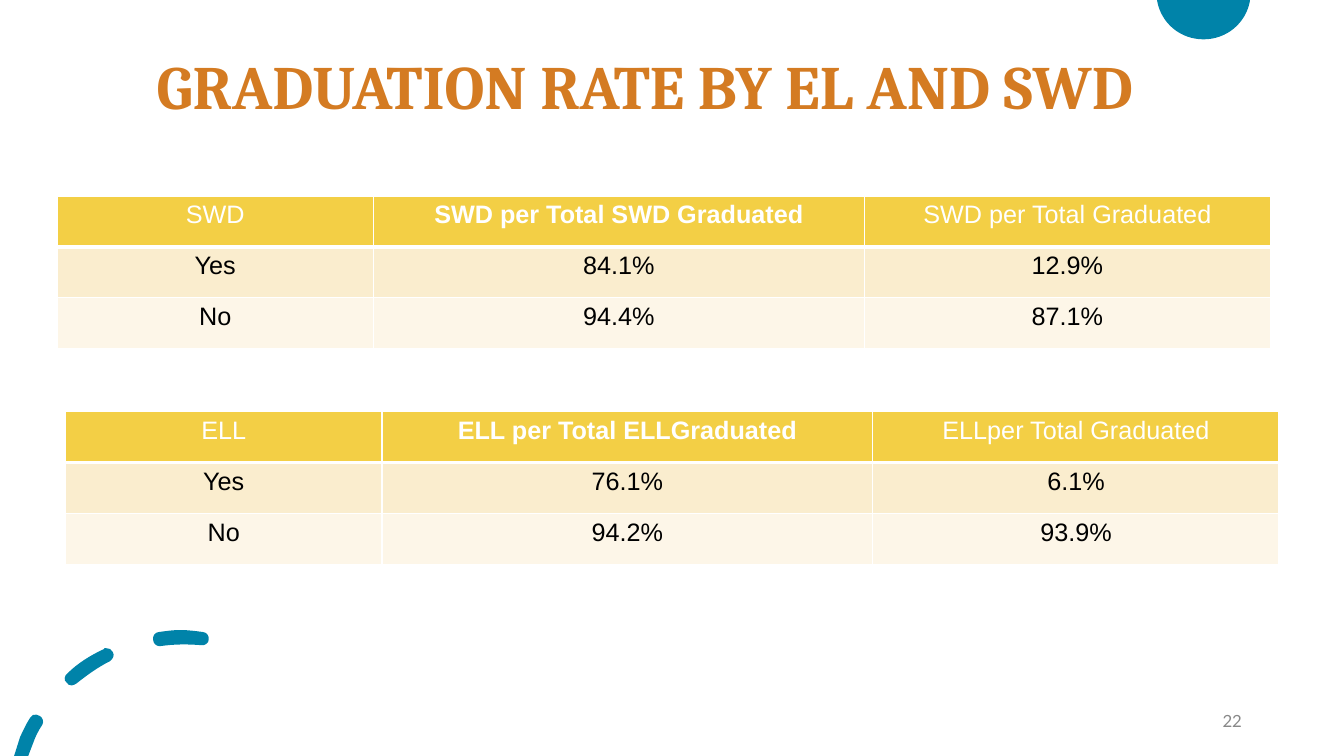
import pptx
import pptx.dml.color
import pptx.enum.text
import pptx.oxml
import pptx.oxml.ns
import pptx.util

# The grid: one column or row is a hundredth of an inch
COLUMNS, ROWS = 1333.33, 750
PITCH = pptx.util.Inches(0.01)
ALIGN = pptx.enum.text.PP_ALIGN


def color(value):
    return pptx.dml.color.RGBColor.from_string(value)


def grid(*counts):
    return [round(count * PITCH) for count in counts]


def write(frame, text, *, size, font, fill, bold=False, align=ALIGN.CENTER, spacing=None):
    paragraph = frame.paragraphs[0]
    paragraph.alignment = align
    paragraph.line_spacing = spacing
    run = paragraph.add_run()
    run.text = text
    run.font.size = pptx.util.Pt(size)
    run.font.name = font
    run.font.bold = bold
    run.font.color.rgb = color(fill)


class SlideBuilder:
    accent, title_color, muted = "0083A9", "D47B22", "888888"
    header_fill, row_fills = "F3CF45", ("FAEDCE", "FDF6E8")
    white, black = "FFFFFF", "000000"
    title_font, table_font, number_font = "Cambria", "Arial", "Lato"

    def __init__(self, presentation):
        self.slide = presentation.slides.add_slide(presentation.slide_layouts[6])
        self.slide.background.fill.solid()
        self.slide.background.fill.fore_color.rgb = color(self.white)

    def outline(self, contours):
        """Each step of a contour is a line (x, y) or a Bézier curve (six numbers)."""
        builder = None
        for start, steps in contours:
            if builder is None:
                builder = self.slide.shapes.build_freeform(*grid(*start), scale=1.0)
            else:
                builder.move_to(*grid(*start))
            builder.add_line_segments([grid(*step[-2:]) for step in steps], close=True)
        shape = builder.convert_to_shape()
        self.bend(shape, [step for _, steps in contours for step in steps])
        shape.shadow.inherit = False
        shape.fill.solid()
        shape.fill.fore_color.rgb = color(self.accent)
        shape.line.fill.background()

    def bend(self, shape, steps):
        lines = list(shape._element.iter(pptx.oxml.ns.qn("a:lnTo")))
        for line, step in zip(lines, steps):
            if len(step) == 6:
                numbers = grid(*step)
                points = "".join(f'<a:pt x="{x - shape.left}" y="{y - shape.top}"/>'
                                 for x, y in zip(numbers[::2], numbers[1::2]))
                curve = pptx.oxml.parse_xml(
                    f'<a:cubicBezTo {pptx.oxml.ns.nsdecls("a")}>{points}</a:cubicBezTo>')
                line.getparent().replace(line, curve)

    def text(self, text, box, **style):
        frame = self.slide.shapes.add_textbox(*grid(*box)).text_frame
        frame.word_wrap = True
        frame.vertical_anchor = pptx.enum.text.MSO_ANCHOR.MIDDLE
        write(frame, text, **style)

    def borders(self, cell, top, bottom):
        properties = cell._tc.get_or_add_tcPr()
        for side, width in (("L", 1), ("R", 1), ("T", top), ("B", bottom)):
            properties.append(pptx.oxml.parse_xml(
                f'<a:ln{side} {pptx.oxml.ns.nsdecls("a")} w="{pptx.util.Pt(width)}">'
                f'<a:solidFill><a:srgbClr val="{self.white}"/></a:solidFill></a:ln{side}>'))

    def table(self, left, top, widths, height, rows):
        box = grid(left, top, sum(widths), height * len(rows))
        table = self.slide.shapes.add_table(len(rows), len(widths), *box).table
        table.horz_banding = False
        for column, width in zip(table.columns, grid(*widths)):
            column.width = width
        for r, row in enumerate(rows):
            table.rows[r].height = grid(height)[0]
            header = r == 0
            for c, text in enumerate(row):
                cell = table.cell(r, c)
                self.borders(cell, top=3 if r == 1 else 1, bottom=3 if header else 1)
                cell.fill.solid()
                cell.fill.fore_color.rgb = color(
                    self.header_fill if header else self.row_fills[(r - 1) % 2])
                write(cell.text_frame, text, size=18, font=self.table_font,
                      fill=self.white if header else self.black, bold=header and c == 1)


def main():
    presentation = pptx.Presentation()
    presentation.slide_width, presentation.slide_height = grid(COLUMNS, ROWS)
    builder = SlideBuilder(presentation)

    # Half disc at the top edge
    builder.outline([((1148, 0), [(1240, 0), (1240, 1), (1236, 23, 1217, 39, 1194, 39),
                                  (1171, 39, 1152, 23, 1148, 1)])])

    # Dashed arc in the bottom corner
    builder.outline([
        ((36, 709), [(34, 708, 31, 710, 30, 712), (26, 718, 23, 725, 20, 731), (14, ROWS),
                     (28, ROWS), (33, 737), (35, 731, 38, 725, 42, 719),
                     (44, 716, 42, 711, 39, 710), (38, 709, 37, 709, 36, 709)]),
        ((105, 643), [(104, 643, 103, 643, 103, 644), (90, 650, 77, 658, 67, 668),
                      (64, 670, 63, 675, 66, 677), (67, 679, 69, 680, 71, 680), (71, 680),
                      (73, 680, 74, 679, 76, 678), (86, 670, 97, 662, 109, 656),
                      (112, 654, 114, 650, 112, 647), (111, 644, 108, 643, 105, 643)]),
        ((179, 625), [(172, 625, 165, 626, 158, 627), (154, 627, 151, 631, 152, 635),
                      (152, 638, 155, 641, 158, 641), (159, 641, 159, 641, 159, 641),
                      (173, 639, 186, 639, 199, 640), (203, 641, 207, 638, 207, 635),
                      (208, 631, 205, 627, 201, 627), (201, 627, 201, 627, 201, 627),
                      (194, 626, 186, 625, 179, 625)]),
    ])

    # Slide number and title
    builder.text("22", (942, 695, 300, 40), size=12, font=builder.number_font,
                 fill=builder.muted, align=ALIGN.RIGHT)
    builder.text("GRADUATION RATE BY EL AND SWD", (38, 16, 1204, 145), size=44,
                 font=builder.title_font, fill=builder.title_color, bold=True, spacing=0.9)

    # Graduation tables
    widths, height = (314, 487, 403), 50.5
    builder.table(56.5, 194.5, widths, height, [
        ("SWD", "SWD per Total SWD Graduated", "SWD per Total Graduated"),
        ("Yes", "84.1%", "12.9%"),
        ("No", "94.4%", "87.1%"),
    ])
    builder.table(65, 408.4, widths, height, [
        ("ELL", "ELL per Total ELLGraduated", "ELLper Total Graduated"),
        ("Yes", "76.1%", "6.1%"),
        ("No", "94.2%", "93.9%"),
    ])

    presentation.save("out.pptx")


if __name__ == "__main__":
    main()
